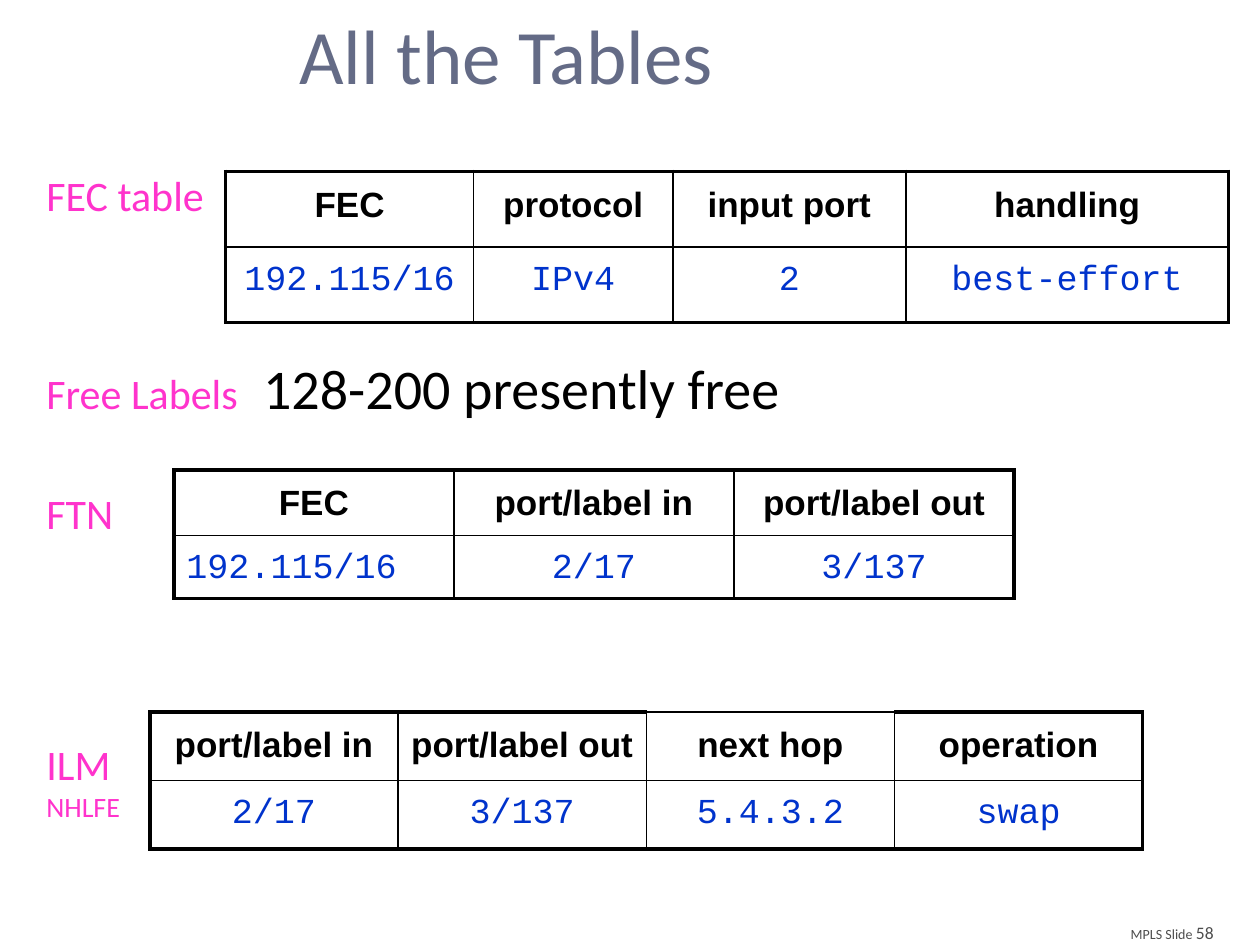
"""Build the slide that lists all the MPLS label tables."""
from lxml import etree
from pptx import Presentation, util as u
from pptx.dml.color import RGBColor
from pptx.enum import text
from pptx.oxml.ns import qn

COLORS = {"title": "646B86", "label": "FF33CC", "ink": "000000",
          "value": "0033CC", "footer": "4D4D4D"}
WIDTH, HEIGHT = u.Inches(10), u.Inches(7.5)
THIN, THICK = u.Pt(1), u.Pt(2.25)
ALIGN = text.PP_ALIGN


def across(percent):
    return round(WIDTH * percent / 100)


def down(percent):
    return round(HEIGHT * percent / 100)


def area(left, top, width, height):
    return across(left), down(top), across(width), down(height)


def style(span, size, color, font="Calibri", bold=False):
    span.font.size = u.Pt(size)
    span.font.name = font
    span.font.bold = bold
    span.font.color.rgb = RGBColor.from_string(COLORS[color])


def add_spans(para, spans):
    for words, size, color in spans:
        span = para.add_run()
        span.text = words
        style(span, size, color)


def add_title(page, words, place):
    title = page.shapes.title
    title.left, title.top, title.width, title.height = place
    frame = title.text_frame
    frame.text = words
    frame.vertical_anchor = text.MSO_ANCHOR.TOP
    para = frame.paragraphs[0]
    para.alignment = ALIGN.CENTER
    style(para.runs[0], 44, "title")


def add_text(page, place, lines, align=ALIGN.LEFT, wrap=True):
    frame = page.shapes.add_textbox(*place).text_frame
    frame.word_wrap = wrap
    for index, (gap, spans) in enumerate(lines):
        para = frame.add_paragraph() if index else frame.paragraphs[0]
        para.alignment = align
        para.space_before = u.Pt(gap)
        add_spans(para, spans)
    return frame


def set_tab(para, position):
    stops = etree.SubElement(para._p.get_or_add_pPr(), qn("a:tabLst"))
    etree.SubElement(stops, qn("a:tab"), pos=str(position), algn="l")


def set_borders(cell, widths):
    properties = cell._tc.get_or_add_tcPr()
    for side, width in zip("LRTB", widths):
        line = etree.SubElement(properties, qn(f"a:ln{side}"), w=str(width))
        fill = etree.SubElement(line, qn("a:solidFill"))
        etree.SubElement(fill, qn("a:srgbClr"), val=COLORS["ink"])


def fill_cell(cell, words, header, align):
    cell.fill.background()
    cell.text_frame.text = words
    para = cell.text_frame.paragraphs[0]
    para.alignment = align
    para.line_spacing = 1.2
    before = etree.SubElement(para._p.get_or_add_pPr(), qn("a:spcBef"))
    etree.SubElement(before, qn("a:spcPct"), val="20000")
    if header:
        style(para.runs[0], 20, "ink", "Arial", True)
    else:
        style(para.runs[0], 20, "value", "Courier New")


def add_grid(page, left, top, columns, rows, content, thin_top=(), left_aligned=()):
    place = area(left, top, sum(columns), sum(rows))
    table = page.shapes.add_table(len(rows), len(columns), *place).table
    table.first_row = table.horz_banding = False
    for column, width in zip(table.columns, columns):
        column.width = across(width)
    for row, height in zip(table.rows, rows):
        row.height = down(height)
    for r, line in enumerate(content):
        for c, words in enumerate(line):
            outer = (c == 0, c == len(columns) - 1,
                     r == 0 and words not in thin_top, r == len(rows) - 1)
            cell = table.cell(r, c)
            set_borders(cell, [THICK if edge else THIN for edge in outer])
            align = ALIGN.LEFT if words in left_aligned else ALIGN.CENTER
            fill_cell(cell, words, r == 0, align)


def main():
    deck = Presentation()
    deck.slide_width, deck.slide_height = WIDTH, HEIGHT
    page = deck.slides.add_slide(deck.slide_layouts[5])
    add_title(page, "All the Tables", area(3.9, 0.13, 72.6, 14.53))
    labels = add_text(page, area(2.7, 17.33, 94.6, 76.13), [
        (0, [("FEC table", 24, "label")]),
        (76, [("Free Labels\t", 24, "label"),
              ("128-200 presently free", 32, "ink")]),
        (38, [("FTN", 24, "label")]),
        (115, [("ILM", 24, "label")]),
        (0, [("NHLFE", 16, "label")]),
    ])
    set_tab(labels.paragraphs[1], across(17.2))
    add_grid(page, 17.9, 18.13, [19.7, 15.8, 18.5, 25.6], [8, 8], [
        ["FEC", "protocol", "input port", "handling"],
        ["192.115/16", "IPv4", "2", "best-effort"]])
    add_grid(page, 13.8, 49.73, [22.23] * 3, [6.93, 6.33], [
        ["FEC", "port/label in", "port/label out"],
        ["192.115/16", "2/17", "3/137"]], left_aligned=["192.115/16"])
    add_grid(page, 11.9, 75.33, [19.7] * 4, [7.27] * 2, [
        ["port/label in", "port/label out", "next hop", "operation"],
        ["2/17", "3/137", "5.4.3.2", "swap"]], thin_top=["next hop"])
    add_text(page, area(88.4, 96.93, 8.9, 3.6),
             [(0, [("MPLS Slide ", 8, "footer"), ("58", 10, "footer")])],
             ALIGN.RIGHT, False)
    deck.save("out.pptx")


if __name__ == "__main__":
    main()
